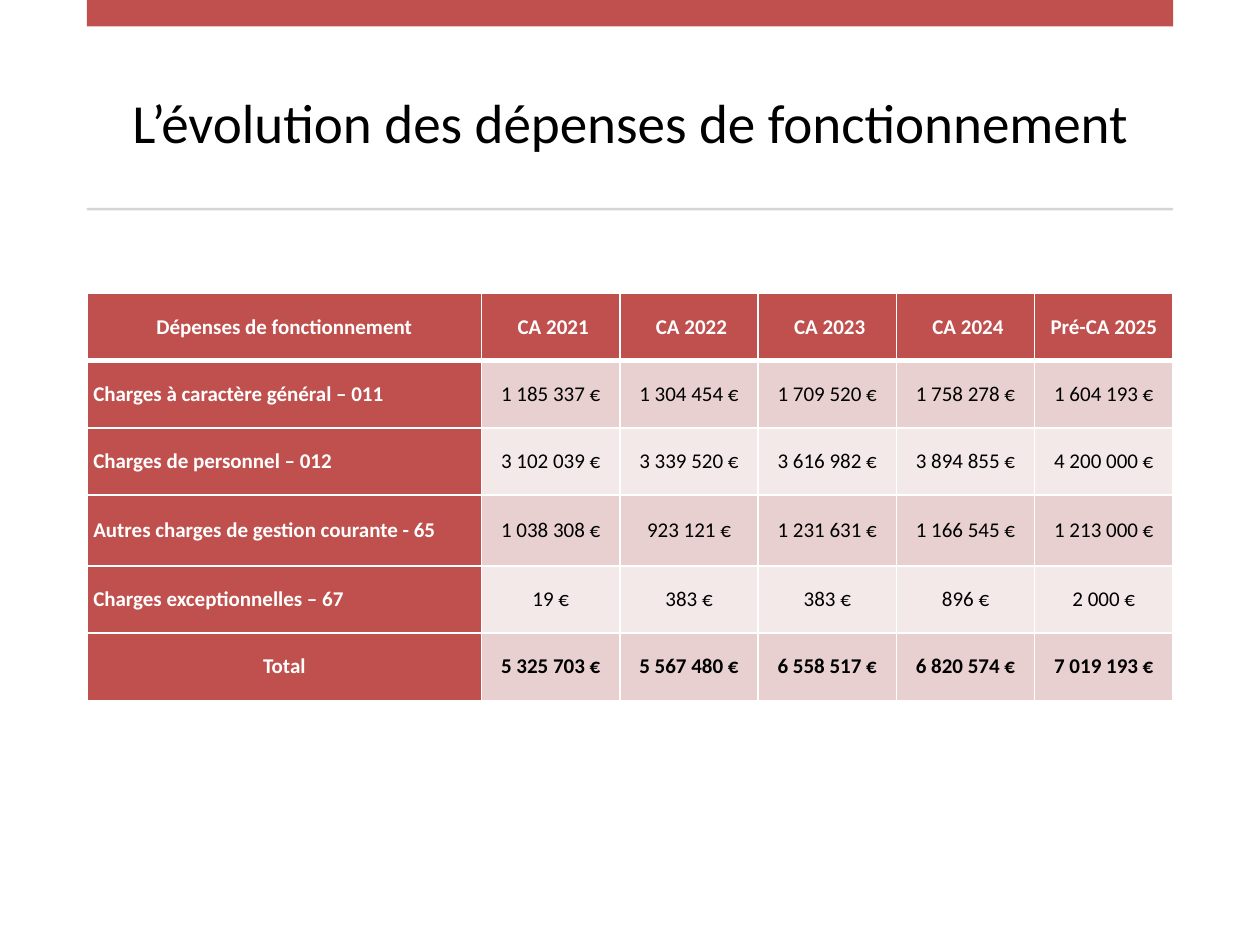
from lxml.etree import SubElement
from pptx import Presentation
from pptx.dml.color import RGBColor
from pptx.enum.shapes import MSO_SHAPE as Preset
from pptx.enum.text import MSO_ANCHOR as Anchor, MSO_AUTO_SIZE as AutoSize, PP_ALIGN as Align
from pptx.oxml.ns import qn
from pptx.util import Inches, Pt

MARGIN, WIDTH = 0.69, 8.62
RED, GREY, WHITE, BLACK = "C0504D", "D5D5D5", "FFFFFF", "000000"
BANDS = ("E8D0D0", "F4E9E9")

YEARS = [" CA 2021", " CA 2022", " CA 2023", " CA 2024", "Pré-CA 2025"]
EXPENSES = [
    ["Dépenses de fonctionnement", *YEARS],
    ["Charges à caractère général – 011",
     "1 185 337 €", "1 304 454 €", "1 709 520 €", "1 758 278 €", "1 604 193 €"],
    ["Charges de personnel – 012",
     "3 102 039 €", "3 339 520 €", "3 616 982 €", "3 894 855 €", "4 200 000 €"],
    ["Autres charges de gestion courante - 65",
     "1 038 308 €", "923 121 €", "1 231 631 €", "1 166 545 €", "1 213 000 €"],
    ["Charges exceptionnelles – 67", "19 €", "383 €", "383 €", "896 €", "2 000 €"],
    ["Total",
     "5 325 703 €", "5 567 480 €", "6 558 517 €", "6 820 574 €", "7 019 193 €"],
]
COLUMN_WIDTHS = [3.14] + [1.1] * len(YEARS)
ROW_HEIGHTS = [0.53, 0.53, 0.53, 0.56, 0.53, 0.53]


def paint(fill, colour):
    fill.solid()
    fill.fore_color.rgb = RGBColor.from_string(colour)


def write(paragraph, words, size, colour, bold=False, align=Align.CENTER):
    paragraph.alignment = align
    run = paragraph.add_run()
    run.text = words
    run.font.name = "Calibri"
    run.font.size = Pt(size)
    run.font.bold = bold
    paint(run.font.fill, colour)


def place_title(slide, left, top, width, height):
    title = slide.shapes.title
    title.left, title.top = Inches(left), Inches(top)
    title.width, title.height = Inches(width), Inches(height)
    frame = title.text_frame
    frame.word_wrap = True
    frame.auto_size = AutoSize.NONE
    frame.vertical_anchor = Anchor.MIDDLE
    write(frame.paragraphs[0], "L’évolution des dépenses de fonctionnement", 31.5, BLACK)


def place_band(slide, left, top, width, height, colour):
    band = slide.shapes.add_shape(
        Preset.RECTANGLE, Inches(left), Inches(top), Inches(width), Inches(height))
    band.shadow.inherit = False
    band.line.fill.background()
    paint(band.fill, colour)


def draw_borders(cell, widths):
    properties = cell._tc.get_or_add_tcPr()
    for side, points in widths.items():
        border = SubElement(properties, qn(f"a:ln{side}"), w=str(Pt(points)))
        solid = SubElement(border, qn("a:solidFill"))
        SubElement(solid, qn("a:srgbClr"), val=WHITE)


def format_cell(cell, words, row, column):
    header, label = row == 0, column == 0
    total = row == len(EXPENSES) - 1
    draw_borders(cell, {"L": 1, "R": 1, "T": 3 if row == 1 else 1, "B": 3 if header else 1})
    paint(cell.fill, RED if header or label else BANDS[(row - 1) % 2])
    cell.vertical_anchor = Anchor.MIDDLE
    cell.margin_left = cell.margin_right = Inches(0.05)
    cell.margin_top = cell.margin_bottom = 0
    write(cell.text_frame.paragraphs[0], words, 12,
          WHITE if header or label else BLACK,
          header or label or total,
          Align.LEFT if label and not (header or total) else Align.CENTER)


def place_expenses(slide, left, top, width, height):
    table = slide.shapes.add_table(
        len(EXPENSES), len(COLUMN_WIDTHS),
        Inches(left), Inches(top), Inches(width), Inches(height)).table
    table.first_col = True
    for column, share in zip(table.columns, COLUMN_WIDTHS):
        column.width = Inches(width * share / sum(COLUMN_WIDTHS))
    for row, share in zip(table.rows, ROW_HEIGHTS):
        row.height = Inches(height * share / sum(ROW_HEIGHTS))
    for row, entries in enumerate(EXPENSES):
        for column, words in enumerate(entries):
            format_cell(table.cell(row, column), words, row, column)


def main():
    deck = Presentation()
    deck.slide_width, deck.slide_height = Inches(10), Inches(7.5)
    slide = deck.slides.add_slide(deck.slide_layouts[5])
    place_title(slide, MARGIN, 0.37, WIDTH, 1.18)
    place_band(slide, MARGIN, 0, WIDTH, 0.21, RED)
    place_band(slide, MARGIN, 1.65, WIDTH, 0.02, GREY)
    place_expenses(slide, MARGIN, 2.33, WIDTH, 3.23)
    deck.save("out.pptx")


if __name__ == "__main__":
    main()
